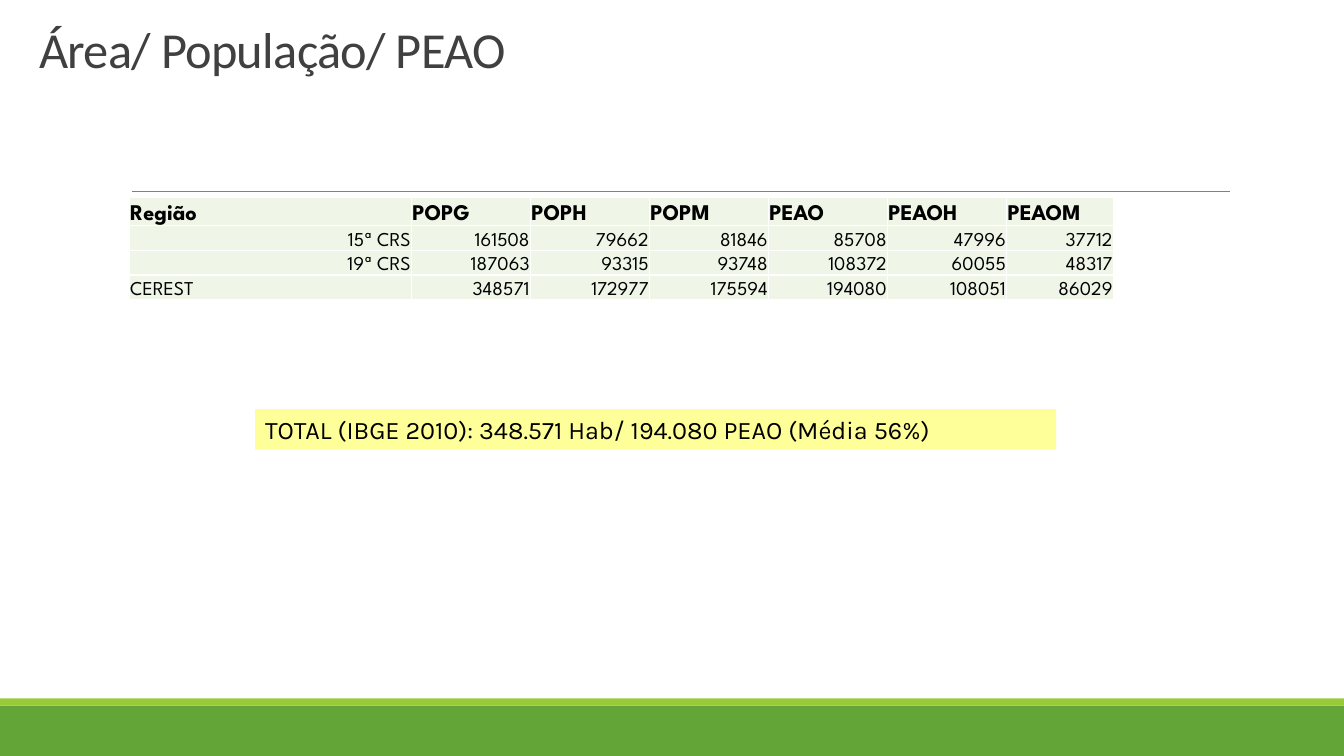
from dataclasses import dataclass

import pptx
import pptx.dml.color
import pptx.enum.shapes
import pptx.enum.text
import pptx.oxml
import pptx.oxml.ns
import pptx.util

Cm = pptx.util.Cm
Pt = pptx.util.Pt
RGBColor = pptx.dml.color.RGBColor
Align = pptx.enum.text.PP_ALIGN
Anchor = pptx.enum.text.MSO_ANCHOR

DARK_GREEN = RGBColor(0x63, 0xA5, 0x37)
LIME = RGBColor(0x99, 0xCB, 0x38)
PALE_GREEN = RGBColor(0xEF, 0xF6, 0xE8)
YELLOW = RGBColor(0xFF, 0xFF, 0x99)
GREY = RGBColor(0x80, 0x80, 0x80)
TITLE_GREY = RGBColor(0x40, 0x40, 0x40)
BLACK = RGBColor(0, 0, 0)

SLIDE_WIDTH, SLIDE_HEIGHT = 33.87, 19.05


@dataclass(frozen=True)
class Band:
    left: float
    top: float
    width: float
    height: float
    color: RGBColor


@dataclass(frozen=True)
class Style:
    font: str
    size: int
    color: RGBColor = BLACK
    bold: bool = False


FOOTER = Band(0, 17.78, SLIDE_WIDTH, 1.27, DARK_GREEN)
FOOTER_EDGE = Band(0, 17.6, SLIDE_WIDTH, 0.18, LIME)
TOTAL = Band(6.43, 10.31, 20.19, 1.02, YELLOW)

TITLE_STYLE = Style("Calibri", 36, TITLE_GREY)
TOTAL_STYLE = Style("Karla", 18)
HEADER_STYLE = Style("League Spartan", 16, bold=True)
BODY_STYLE = Style("League Spartan", 14)

COLUMN_WIDTHS = [7.11] + [3.0] * 5 + [2.69]
ROW_HEIGHTS = [0.71] + [0.62] * 3
POPULATION = [
    ["Região", "POPG", "POPH", "POPM", "PEAO", "PEAOH", "PEAOM"],
    ["15ª CRS", "161508", "79662", "81846", "85708", "47996", "37712"],
    ["19ª CRS", "187063", "93315", "93748", "108372", "60055", "48317"],
    ["CEREST", "348571", "172977", "175594", "194080", "108051", "86029"],
]
LEFT_ALIGNED = {*POPULATION[0], "CEREST"}


def add_run(paragraph, text: str, style: Style):
    run = paragraph.add_run()
    run.text = text
    run.font.name = style.font
    run.font.size = Pt(style.size)
    run.font.bold = style.bold
    run.font.color.rgb = style.color
    return run


def add_band(slide, band: Band):
    shape = slide.shapes.add_shape(
        pptx.enum.shapes.MSO_SHAPE.RECTANGLE,
        Cm(band.left), Cm(band.top), Cm(band.width), Cm(band.height))
    shape.shadow.inherit = False
    shape.fill.solid()
    shape.fill.fore_color.rgb = band.color
    shape.line.fill.background()
    return shape


def add_rule(slide, left: float, right: float, top: float) -> None:
    rule = slide.shapes.add_connector(
        pptx.enum.shapes.MSO_CONNECTOR.STRAIGHT,
        Cm(left), Cm(top), Cm(right), Cm(top))
    rule.line.color.rgb = GREY
    rule.line.width = Pt(0.5)
    rule._element.spPr.append(pptx.oxml.parse_xml(
        f'<a:effectLst {pptx.oxml.ns.nsdecls("a")}/>'))


def add_title(slide, text: str) -> None:
    title = slide.shapes.add_textbox(Cm(0.74), Cm(0.18), Cm(21.64), Cm(1.93))
    frame = title.text_frame
    frame.word_wrap = True
    frame.vertical_anchor = Anchor.BOTTOM
    paragraph = frame.paragraphs[0]
    paragraph.line_spacing = 0.85
    run = add_run(paragraph, text, TITLE_STYLE)
    run.font._element.set("spc", "-50")


def add_total(slide, text: str) -> None:
    frame = add_band(slide, TOTAL).text_frame
    frame.word_wrap = True
    frame.vertical_anchor = Anchor.TOP
    paragraph = frame.paragraphs[0]
    paragraph.alignment = Align.LEFT
    add_run(paragraph, text, TOTAL_STYLE)


def set_borders(cell) -> None:
    properties = cell._tc.get_or_add_tcPr()
    for index, side in enumerate(("lnL", "lnR", "lnT", "lnB")):
        properties.insert(index, pptx.oxml.parse_xml(
            f'<a:{side} {pptx.oxml.ns.nsdecls("a")} w="12700"><a:solidFill>'
            f'<a:srgbClr val="FFFFFF"/></a:solidFill></a:{side}>'))


def fill_cell(cell, text: str, style: Style) -> None:
    cell.fill.solid()
    cell.fill.fore_color.rgb = PALE_GREEN
    cell.margin_left = cell.margin_right = cell.margin_top = Cm(0.02)
    cell.margin_bottom = 0
    cell.vertical_anchor = Anchor.BOTTOM
    set_borders(cell)
    paragraph = cell.text_frame.paragraphs[0]
    paragraph.alignment = Align.LEFT if text in LEFT_ALIGNED else Align.RIGHT
    add_run(paragraph, text, style)


def add_population_table(slide) -> None:
    table = slide.shapes.add_table(
        len(ROW_HEIGHTS), len(COLUMN_WIDTHS), Cm(3.26), Cm(4.98),
        Cm(sum(COLUMN_WIDTHS)), Cm(sum(ROW_HEIGHTS))).table
    table.first_row = table.horz_banding = False
    for column, width in zip(table.columns, COLUMN_WIDTHS):
        column.width = Cm(width)
    for row_index, (row, height) in enumerate(zip(table.rows, ROW_HEIGHTS)):
        row.height = Cm(height)
        style = BODY_STYLE if row_index else HEADER_STYLE
        for cell, text in zip(row.cells, POPULATION[row_index]):
            fill_cell(cell, text, style)


def main() -> None:
    deck = pptx.Presentation()
    deck.slide_width, deck.slide_height = Cm(SLIDE_WIDTH), Cm(SLIDE_HEIGHT)
    slide = deck.slides.add_slide(deck.slide_layouts[6])

    # Footer bands and the thin rule
    for band in (FOOTER, FOOTER_EDGE):
        add_band(slide, band)
    add_rule(slide, left=3.33, right=30.99, top=4.82)

    # Title, total and table
    add_title(slide, "Área/ População/ PEAO")
    add_total(slide, "TOTAL (IBGE 2010): 348.571 Hab/ 194.080 PEAO (Média 56%)")
    add_population_table(slide)

    deck.save("out.pptx")


if __name__ == "__main__":
    main()
